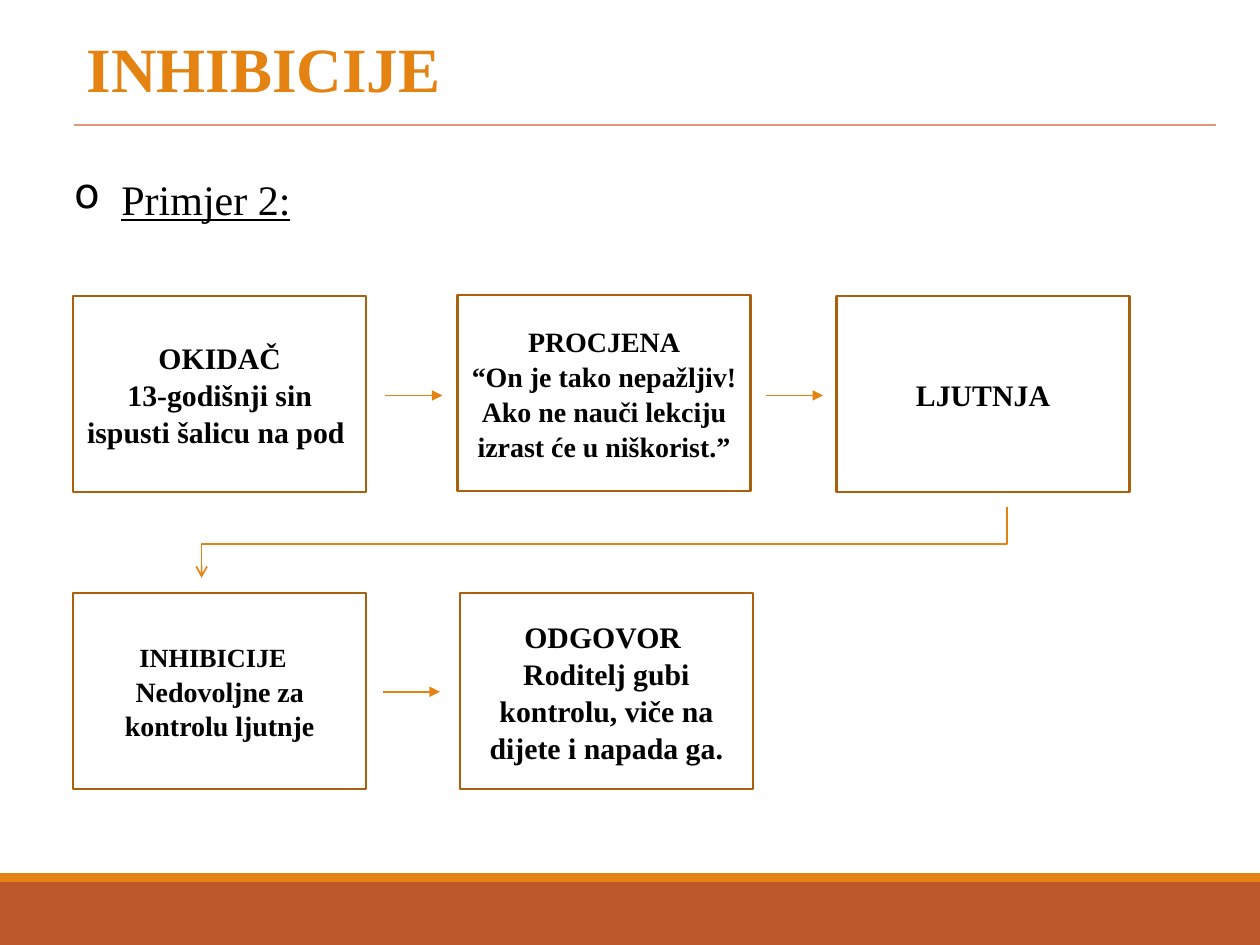
from pptx import Presentation
from pptx.dml.color import RGBColor
from pptx.enum.shapes import MSO_CONNECTOR, MSO_SHAPE
from pptx.enum.text import MSO_ANCHOR, PP_ALIGN
from pptx.oxml.ns import qn
from pptx.util import Pt
from lxml.etree import SubElement

COLORS = {"orange": "E48312", "rust": "BD582C", "rule": "E09878",
          "border": "A9610D", "text": "000000"}
FONT = "Times New Roman"
BOX_WIDTH, BOX_HEIGHT = 167.5, 112
ARROW_LENGTH = 32.5

# left, top, then (text, size) for each paragraph
BOXES = [
    (41.8, 169, [("OKIDAČ", 17), ("13-godišnji sin ispusti šalicu na pod ", 17)]),
    (261.4, 168.5, [("PROCJENA", 16),
                    ("“On je tako nepažljiv! Ako ne nauči lekciju izrast će u niškorist.”", 16)]),
    (478, 169.3, [("LJUTNJA", 17)]),
    (41.8, 339, [("INHIBICIJE  ", 15), ("Nedovoljne za kontrolu ljutnje", 16)]),
    (262.8, 339, [("ODGOVOR ", 17),
                  ("Roditelj gubi kontrolu, viče na dijete i napada ga.", 17)]),
]
ARROWS = [(220.3, 226), (437.8, 226), (218.9, 395.3)]
RETURN_PATH = [(575.3, 289.5), (575.3, 311), (115.2, 311), (115.2, 330.2)]


def color(name):
    return RGBColor.from_string(COLORS[name])


def format_font(paragraph, size, color_name="text", **values):
    for name, value in {"name": FONT, "size": Pt(size), **values}.items():
        setattr(paragraph.font, name, value)
    paragraph.font.color.rgb = color(color_name)


def style_line(line, color_name, width, arrowhead=None):
    line.color.rgb = color(color_name)
    line.width = Pt(width)
    if arrowhead:
        SubElement(line._get_or_add_ln(), qn("a:tailEnd"), type=arrowhead)


def add_bar(slide, top, height, color_name):
    shape = slide.shapes.add_shape(MSO_SHAPE.RECTANGLE, 0, Pt(top), Pt(720), Pt(height))
    shape.shadow.inherit = False
    shape.fill.solid()
    shape.fill.fore_color.rgb = color(color_name)
    shape.line.fill.background()


def add_text(slide, left, top, width, height, text):
    shape = slide.shapes.add_textbox(Pt(left), Pt(top), Pt(width), Pt(height))
    shape.text_frame.word_wrap = True
    shape.text_frame.margin_top = Pt(7.5)
    paragraph = shape.text_frame.paragraphs[0]
    paragraph.text = text
    return paragraph


def add_bullet(paragraph, character, indent):
    properties = paragraph._p.get_or_add_pPr()
    properties.set("marL", str(Pt(indent)))
    properties.set("indent", str(-Pt(indent)))
    SubElement(properties, qn("a:buChar"), char=character)


def add_box(slide, left, top, lines):
    shape = slide.shapes.add_shape(MSO_SHAPE.RECTANGLE, Pt(left), Pt(top),
                                   Pt(BOX_WIDTH), Pt(BOX_HEIGHT))
    shape.shadow.inherit = False
    shape.fill.background()
    style_line(shape.line, "border", 1.25)
    frame = shape.text_frame
    frame.word_wrap = True
    frame.vertical_anchor = MSO_ANCHOR.MIDDLE
    for index, (text, size) in enumerate(lines):
        paragraph = frame.add_paragraph() if index else frame.paragraphs[0]
        paragraph.text = text
        paragraph.alignment = PP_ALIGN.CENTER
        paragraph.line_spacing = 1.04
        format_font(paragraph, size, bold=True)


def add_horizontal_line(slide, left, top, length, color_name, arrowhead=None):
    connector = slide.shapes.add_connector(MSO_CONNECTOR.STRAIGHT, Pt(left), Pt(top),
                                           Pt(left + length), Pt(top))
    style_line(connector.line, color_name, 1, arrowhead)
    SubElement(connector._element.spPr, qn("a:effectLst"))


def add_bent_arrow(slide, points):
    start, *corners = [(Pt(x), Pt(y)) for x, y in points]
    builder = slide.shapes.build_freeform(*start)
    builder.add_line_segments(corners, close=False)
    shape = builder.convert_to_shape()
    shape.shadow.inherit = False
    shape.fill.background()
    style_line(shape.line, "orange", 1, "arrow")


def main():
    presentation = Presentation()
    presentation.slide_width, presentation.slide_height = Pt(720), Pt(540)
    slide = presentation.slides.add_slide(presentation.slide_layouts[6])

    add_bar(slide, 504, 36, "rust")
    add_bar(slide, 499, 5, "orange")

    title = add_text(slide, 42.5, 9.4, 677.5, 51, "INHIBICIJE")
    format_font(title, 36, "orange", bold=True)
    add_horizontal_line(slide, 42.5, 71.3, 652.3, "rule")

    example = add_text(slide, 35.3, 91.4, 659.5, 58.3, "Primjer 2:")
    add_bullet(example, "o", 27)
    format_font(example, 24, underline=True)

    for left, top, lines in BOXES:
        add_box(slide, left, top, lines)
    for left, top in ARROWS:
        add_horizontal_line(slide, left, top, ARROW_LENGTH, "orange", "triangle")
    add_bent_arrow(slide, RETURN_PATH)

    presentation.save("out.pptx")


if __name__ == "__main__":
    main()
